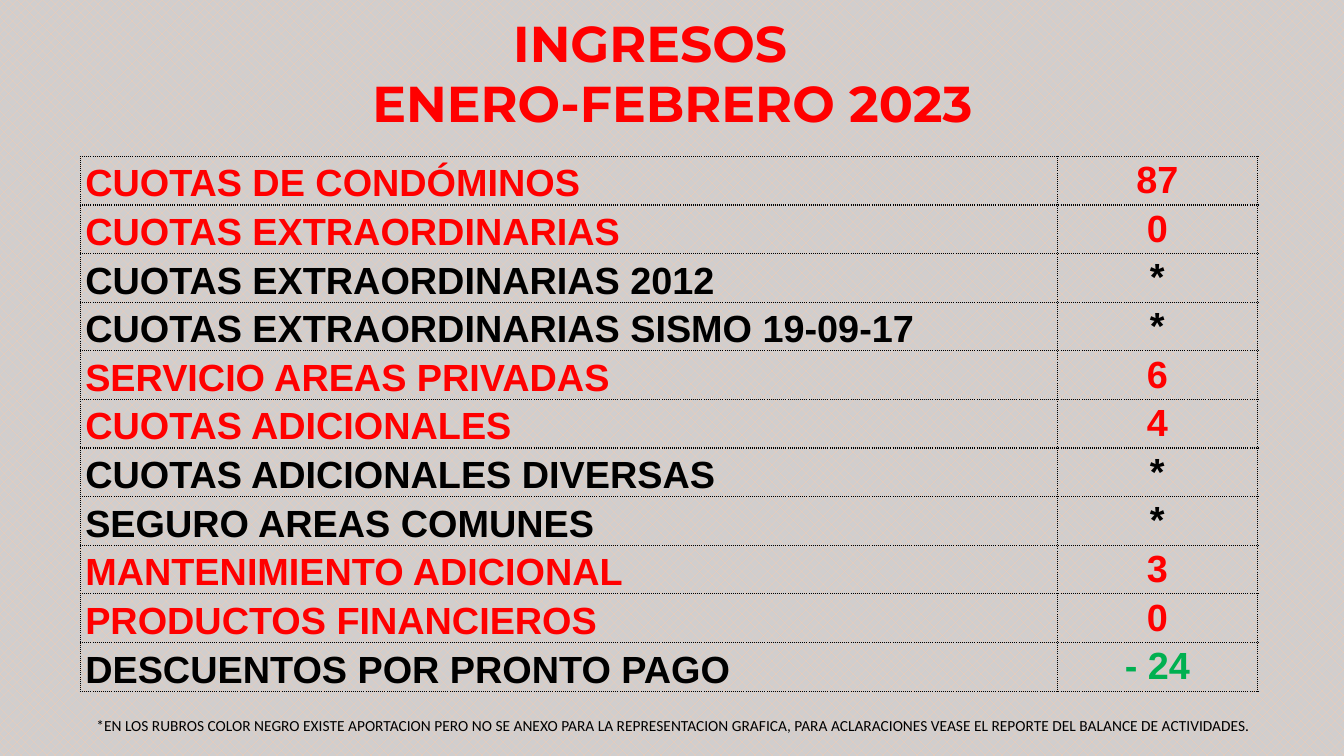
import pptx
import pptx.util
import pptx.oxml
import pptx.oxml.ns
import pptx.dml.color
import pptx.enum.dml
import pptx.enum.text

Cm = pptx.util.Cm
Pt = pptx.util.Pt
Align = pptx.enum.text.PP_ALIGN
Anchor = pptx.enum.text.MSO_ANCHOR
RED, BLACK, GREEN = "FF0000", "000000", "00B050"


def color(code):
    return pptx.dml.color.RGBColor.from_string(code)


def style(par, face, size, code, bold=False):
    par.font.name = face
    par.font.size = Pt(size)
    par.font.bold = bold
    par.font.color.rgb = color(code)


deck = pptx.Presentation()
deck.slide_width, deck.slide_height = Cm(33.87), Cm(19.05)
slide = deck.slides.add_slide(deck.slide_layouts[6])

# Patterned background
back = slide.background.fill
back.patterned()
back.pattern = pptx.enum.dml.MSO_PATTERN.from_xml("pct40")
back.fore_color.rgb = color("F8CBAD")
back.back_color.rgb = color("D0CECE")

# Title, second line shifted right by an indent
frame = slide.shapes.add_textbox(Cm(7.57), Cm(0.18), Cm(17.63), Cm(3.33)).text_frame
frame.word_wrap = True
frame.text = "INGRESOS\nENERO-FEBRERO 2023"
for par in frame.paragraphs:
    par.alignment = Align.CENTER
    style(par, "Montserrat", 36, RED, True)
frame.paragraphs[1]._p.get_or_add_pPr().set("marL", str(Cm(1.12)))

# Income table: label, value, label colour, value colour
rows = [
    ("CUOTAS DE CONDÓMINOS", "87", RED, RED),
    ("CUOTAS EXTRAORDINARIAS", "0", RED, RED),
    ("CUOTAS EXTRAORDINARIAS 2012", "*", BLACK, BLACK),
    ("CUOTAS EXTRAORDINARIAS SISMO 19-09-17", "*", BLACK, BLACK),
    ("SERVICIO AREAS PRIVADAS", "6", RED, RED),
    ("CUOTAS ADICIONALES", "4", RED, RED),
    ("CUOTAS ADICIONALES DIVERSAS", "*", BLACK, BLACK),
    ("SEGURO AREAS COMUNES", "*", BLACK, BLACK),
    ("MANTENIMIENTO ADICIONAL", "3", RED, RED),
    ("PRODUCTOS FINANCIEROS", "0", RED, RED),
    ("DESCUENTOS POR PRONTO PAGO", "- 24", BLACK, GREEN),
]
table = slide.shapes.add_table(
    len(rows), 2, Cm(2.03), Cm(3.94), Cm(29.66), Cm(13.47)).table
table.first_row = table.horz_banding = False
table.columns[0].width, table.columns[1].width = Cm(24.61), Cm(5.05)

for r, row in enumerate(rows):
    for c in range(2):
        cell = table.cell(r, c)
        cell.text = row[c]
        cell.fill.background()
        cell.margin_left = cell.margin_right = Cm(0.12)
        cell.margin_top = cell.margin_bottom = 0
        cell.vertical_anchor = (Anchor.BOTTOM, Anchor.TOP)[c]
        par = cell.text_frame.paragraphs[0]
        par.alignment = (Align.LEFT, Align.CENTER)[c]
        par.line_spacing = 1.07
        style(par, "Arial", 27, row[c + 2], True)

        # Dotted borders go ahead of the fill
        props = cell._tc.get_or_add_tcPr()
        for i, side in enumerate("LRTB"):
            props.insert(i, pptx.oxml.parse_xml(
                f'<a:ln{side} {pptx.oxml.ns.nsdecls("a")} w="{Pt(1)}">'
                f'<a:solidFill><a:srgbClr val="{BLACK}"/></a:solidFill>'
                f'<a:prstDash val="dot"/></a:ln{side}>'))

# Footnote
frame = slide.shapes.add_textbox(Cm(2.18), Cm(17.93), Cm(31.04), Cm(0.74)).text_frame
frame.word_wrap = True
frame.text = (
    "*EN LOS RUBROS COLOR NEGRO EXISTE APORTACION PERO NO SE ANEXO PARA LA "
    "REPRESENTACION GRAFICA, PARA ACLARACIONES VEASE EL REPORTE DEL BALANCE "
    "DE ACTIVIDADES.")
style(frame.paragraphs[0], "Calibri", 11, BLACK)

deck.save("out.pptx")
